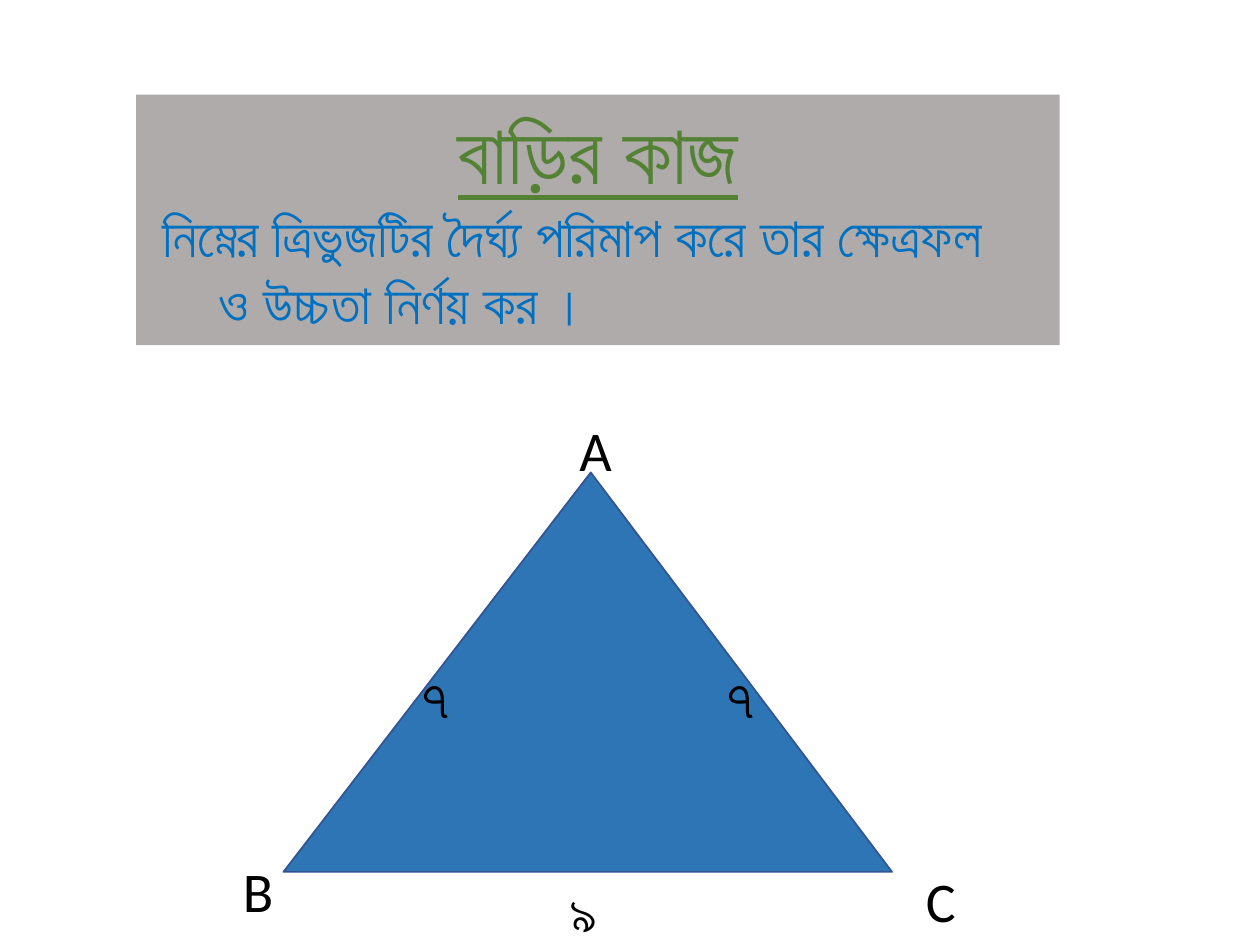
from pptx import Presentation
from pptx import util as u
from pptx.dml.color import RGBColor
from pptx.enum import shapes, text


def tint(code):
    return RGBColor.from_string(code)


def write(par, words, size=32, color="000000", font="Calibri",
          under=False, align=text.PP_ALIGN.LEFT, left=0, first=0):
    """Fill a paragraph; left and first are its indents in inches."""
    par.text = words
    par.alignment = align
    if left or first:
        props = par._p.get_or_add_pPr()
        props.set("marL", str(u.Inches(left)))
        props.set("indent", str(u.Inches(first)))
    for run in par.runs:
        run.font.name = font
        run.font.size = u.Pt(size)
        run.font.color.rgb = tint(color)
        run.font.underline = under


class Board:
    """Holds the font and the current slide."""

    def __init__(self, slide, font="Calibri"):
        self.slide = slide
        self.font = font

    def shape(self, kind, box, fill, line=None):
        item = self.slide.shapes.add_shape(kind, *map(u.Inches, box))
        item.shadow.inherit = False
        item.fill.solid()
        item.fill.fore_color.rgb = tint(fill)
        if line:
            item.line.color.rgb = tint(line)
            item.line.width = u.Pt(1)
        else:
            item.line.fill.background()
        return item

    def panel(self, box, fill, lines):
        frame = self.shape(shapes.MSO_SHAPE.RECTANGLE, box, fill).text_frame
        frame.word_wrap = True
        frame.auto_size = text.MSO_AUTO_SIZE.SHAPE_TO_FIT_TEXT
        frame.vertical_anchor = text.MSO_ANCHOR.TOP
        for i, (words, style) in enumerate(lines):
            par = frame.add_paragraph() if i else frame.paragraphs[0]
            write(par, words, font=self.font, **style)

    def label(self, words, box, size=32):
        item = self.slide.shapes.add_textbox(*map(u.Inches, box))
        frame = item.text_frame
        frame.word_wrap = True
        frame.auto_size = text.MSO_AUTO_SIZE.SHAPE_TO_FIT_TEXT
        write(frame.paragraphs[0], words, size=size, font=self.font)


def main():
    deck = Presentation()
    deck.slide_width, deck.slide_height = u.Inches(10), u.Inches(7.5)
    board = Board(deck.slides.add_slide(deck.slide_layouts[6]))

    area = board.shape(shapes.MSO_SHAPE.ISOSCELES_TRIANGLE,
                       (2.25, 3.75, 4.83, 3.17), "2E75B6", "325491")
    area.adjustments[0] = 0.505

    board.panel((1.08, 0.75, 7.33, 1.99), "AFABAB", [
        ("বাড়ির কাজ", dict(size=48, color="548235", under=True,
                           align=text.PP_ALIGN.CENTER)),
        ("নিম্নের ত্রিভুজটির দৈর্ঘ্য পরিমাপ করে তার ক্ষেত্রফল\v"
         "ও উচ্চতা নির্ণয় কর ।",
         dict(color="0070C0", left=0.56, first=-0.45)),
    ])

    for name, x, y, width in (("A", 4.5, 3.25, 0.5), ("B", 1.83, 6.75, 0.67),
                              ("C", 7.25, 6.83, 0.33), ("৯", 4.42, 6.92, 1.33)):
        board.label(name, (x, y, width, 0.64))
    for x, width in ((3.25, 0.67), (5.67, 0.92)):
        board.label("৭", (x, 5.17, width, 0.71), size=36)

    deck.save("out.pptx")


if __name__ == "__main__":
    main()
